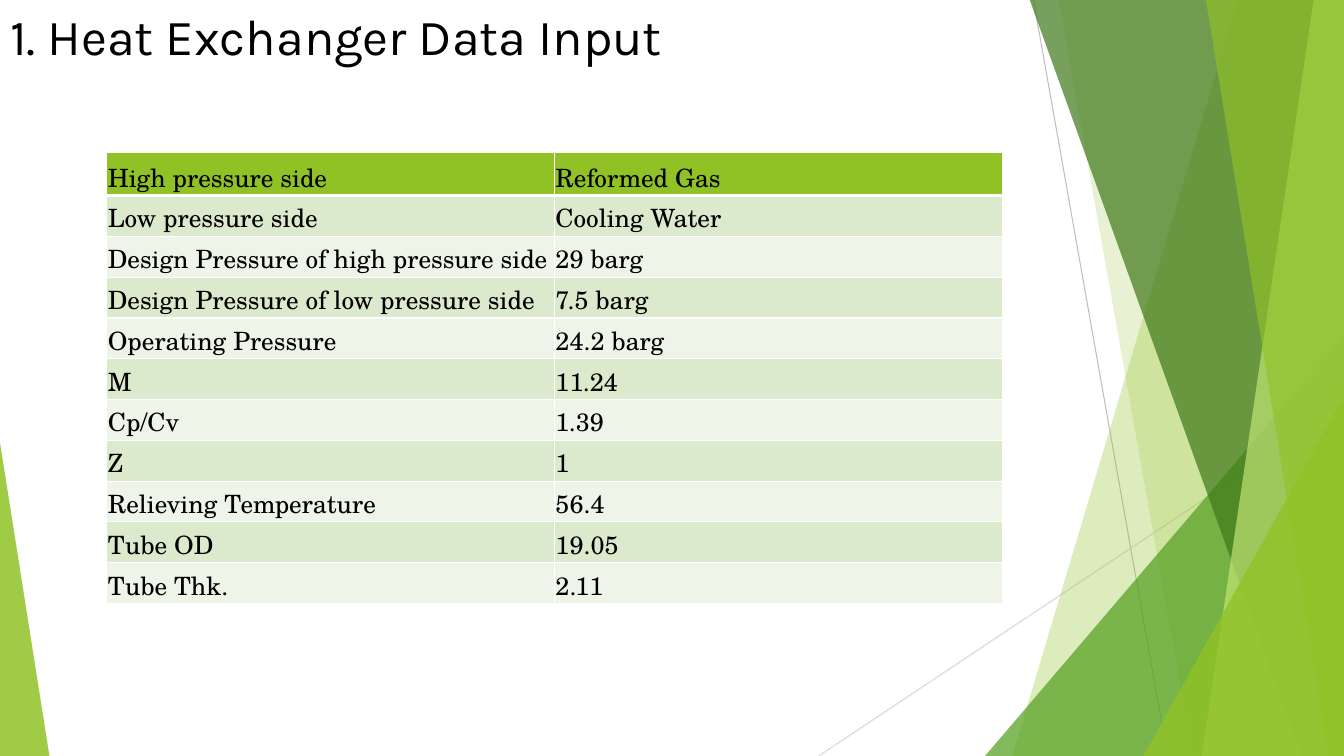
from dataclasses import dataclass

from lxml import etree
from pptx import Presentation
from pptx.dml.color import RGBColor
from pptx.enum.shapes import MSO_CONNECTOR, MSO_SHAPE
from pptx.enum.text import MSO_ANCHOR, MSO_AUTO_SIZE, PP_ALIGN
from pptx.oxml.ns import qn
from pptx.util import Inches, Pt

STRAIGHT = MSO_CONNECTOR.STRAIGHT
TRIANGLE = MSO_SHAPE.ISOSCELES_TRIANGLE
TOP, BOTTOM = MSO_ANCHOR.TOP, MSO_ANCHOR.BOTTOM
LEFT = PP_ALIGN.LEFT
NO_AUTOFIT = MSO_AUTO_SIZE.NONE

WIDTH, HEIGHT = 13.33, 7.5
BAND_TOP = -0.01
LIME, LEAF, FOREST, PALE = "90C226", "54A021", "3F7819", "C0E474"
HEADER_HEIGHT, TABLE_HEIGHT = 0.43, 4.48
ROW_COLOURS = ("EEF4E8", "DBE9CD")
INPUTS = [
    ("High pressure side", "Reformed Gas"),
    ("Low pressure side", "Cooling Water"),
    ("Design Pressure of high pressure side", "29 barg"),
    ("Design Pressure of low pressure side", "7.5 barg"),
    ("Operating Pressure", "24.2 barg"),
    ("M", "11.24"),
    ("Cp/Cv", "1.39"),
    ("Z", "1"),
    ("Relieving Temperature", "56.4"),
    ("Tube OD", "19.05"),
    ("Tube Thk.", "2.11"),
]


@dataclass
class Ray:
    start: tuple[float, float]
    end: tuple[float, float]
    colour: str


@dataclass
class Band:
    top_left: float
    bottom_left: float
    colour: str
    opacity: int


@dataclass
class Wedge:
    left: float
    top: float
    width: float
    apex: float
    colour: str
    opacity: int


RAYS = [
    Ray((10.25, 0), (11.58, HEIGHT), "BFBFBF"),
    Ray((WIDTH, 4.03), (8.12, HEIGHT), "D9D9D9"),
]
FACETS = [
    Band(12.28, 10.04, LIME, 30),
    Band(10.5, 11.83, LIME, 20),
    Wedge(9.77, 3.33, 3.56, 1, LEAF, 72),
    Band(10.21, 12.91, FOREST, 70),
    Band(13.03, 11.92, PALE, 70),
    Band(11.96, 13.18, LIME, 65),
    Wedge(11.34, 3.93, 1.99, 1, LIME, 80),
    Wedge(0, 4.39, 0.49, 0, LIME, 85),
]


def rgb(colour: str) -> RGBColor:
    return RGBColor.from_string(colour)


def write(frame, text: str, *, font: str, size: float, anchor,
          margins: tuple[float, float, float, float], colour: str = "000000") -> None:
    frame.word_wrap = True
    frame.vertical_anchor = anchor
    (frame.margin_left, frame.margin_top,
     frame.margin_right, frame.margin_bottom) = map(Inches, margins)
    paragraph = frame.paragraphs[0]
    paragraph.alignment = LEFT
    run = paragraph.add_run()
    run.text = text
    run.font.name = font
    run.font.size = Pt(size)
    run.font.color.rgb = rgb(colour)


def draw_ray(slide, ray: Ray) -> None:
    line = slide.shapes.add_connector(STRAIGHT, *map(Inches, ray.start + ray.end))
    line.line.color.rgb = rgb(ray.colour)
    line.line.width = Pt(0.75)
    etree.SubElement(line.element.spPr, qn("a:effectLst"))


def draw_facet(slide, facet: Band | Wedge) -> None:
    if isinstance(facet, Band):
        outline = slide.shapes.build_freeform(Inches(facet.top_left), Inches(BAND_TOP))
        corners = [(WIDTH, BAND_TOP), (WIDTH, HEIGHT), (facet.bottom_left, HEIGHT)]
        outline.add_line_segments([(Inches(x), Inches(y)) for x, y in corners])
        shape = outline.convert_to_shape()
    else:
        shape = slide.shapes.add_shape(
            TRIANGLE, Inches(facet.left), Inches(facet.top),
            Inches(facet.width), Inches(HEIGHT - facet.top))
        shape.adjustments[0] = facet.apex
    shape.shadow.inherit = False
    shape.fill.solid()
    shape.fill.fore_color.rgb = rgb(facet.colour)
    shape.line.fill.background()
    tint = shape.element.spPr.find(".//" + qn("a:srgbClr"))
    etree.SubElement(tint, qn("a:alpha"), val=str(facet.opacity * 1000))


def add_borders(cell, **widths: float) -> None:
    properties = cell._tc.get_or_add_tcPr()
    for side, width in widths.items():
        border = etree.SubElement(properties, qn(f"a:ln{side}"), w=str(Pt(width)))
        fill = etree.SubElement(border, qn("a:solidFill"))
        etree.SubElement(fill, qn("a:srgbClr"), val="FFFFFF")


def draw_inputs(slide) -> None:
    table = slide.shapes.add_table(
        len(INPUTS), 2, Inches(1.06), Inches(1.51), Inches(8.88), Inches(TABLE_HEIGHT)).table
    row_height = (TABLE_HEIGHT - HEADER_HEIGHT) / (len(INPUTS) - 1)
    for index, values in enumerate(INPUTS):
        is_header = index == 0
        table.rows[index].height = Inches(HEADER_HEIGHT if is_header else row_height)
        for column, value in enumerate(values):
            cell = table.cell(index, column)
            add_borders(cell, L=1, R=1, T=3 if index == 1 else 1, B=3 if is_header else 1)
            cell.fill.solid()
            cell.fill.fore_color.rgb = rgb(LIME if is_header else ROW_COLOURS[index % 2])
            write(cell.text_frame, value, font="TeX Gyre Schola", size=18,
                  anchor=BOTTOM, margins=(0, 0, 0, 0))
            cell.vertical_anchor = BOTTOM
            cell.margin_left = cell.margin_top = cell.margin_right = Inches(0.01)
            cell.margin_bottom = 0


def draw_title(slide) -> None:
    title = slide.shapes.title
    title.left = title.top = 0
    title.width, title.height = Inches(WIDTH), Inches(HEIGHT)
    title.text_frame.auto_size = NO_AUTOFIT
    write(title.text_frame, "1. Heat Exchanger Data Input", font="Karla", size=36,
          anchor=TOP, margins=(0.1, 0.05, 0.1, 0.05))


def main() -> None:
    deck = Presentation()
    deck.slide_width, deck.slide_height = Inches(WIDTH), Inches(HEIGHT)
    slide = deck.slides.add_slide(deck.slide_layouts[5])
    for ray in RAYS:
        draw_ray(slide, ray)
    for facet in FACETS:
        draw_facet(slide, facet)
    draw_title(slide)
    draw_inputs(slide)
    deck.save("out.pptx")


if __name__ == "__main__":
    main()
